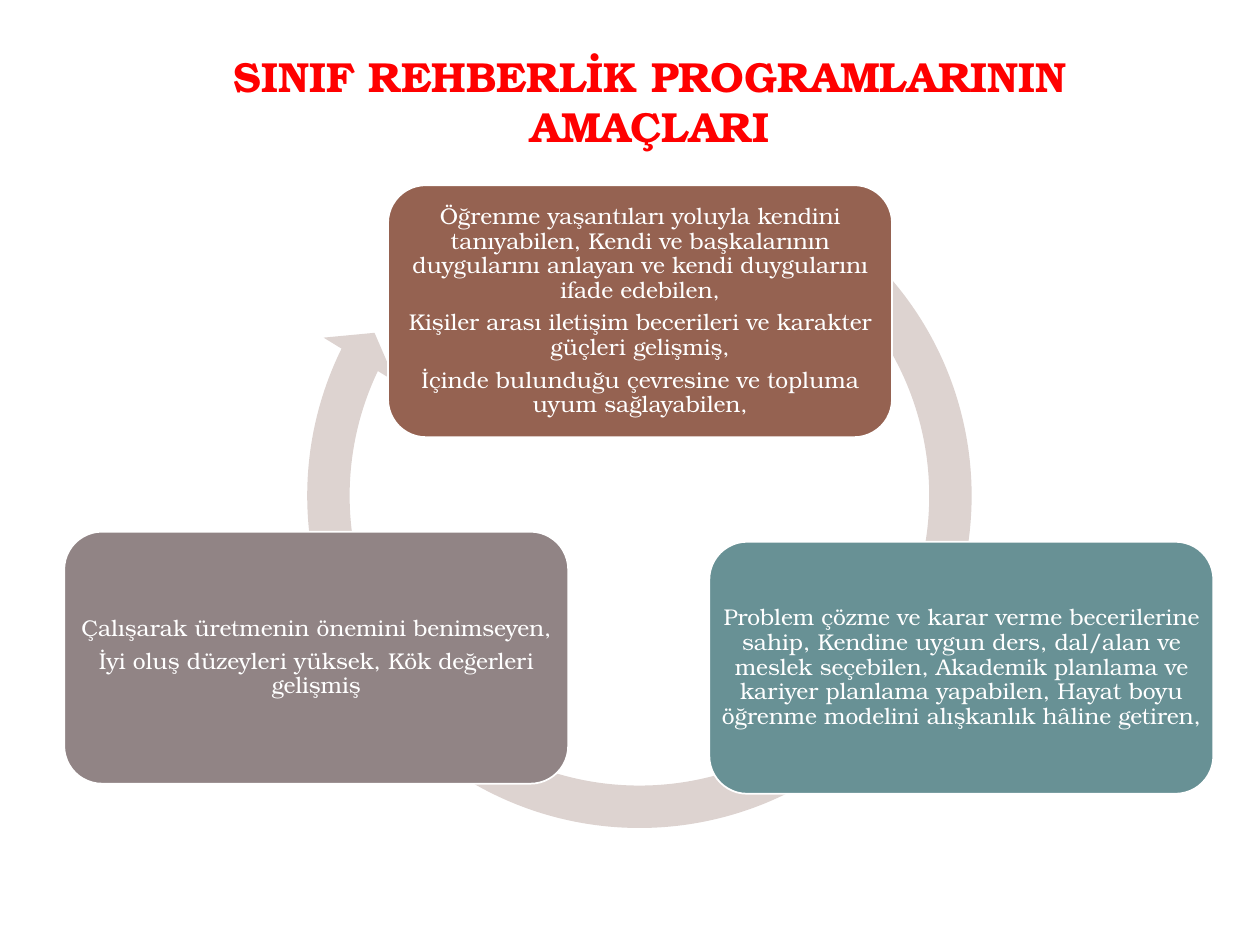
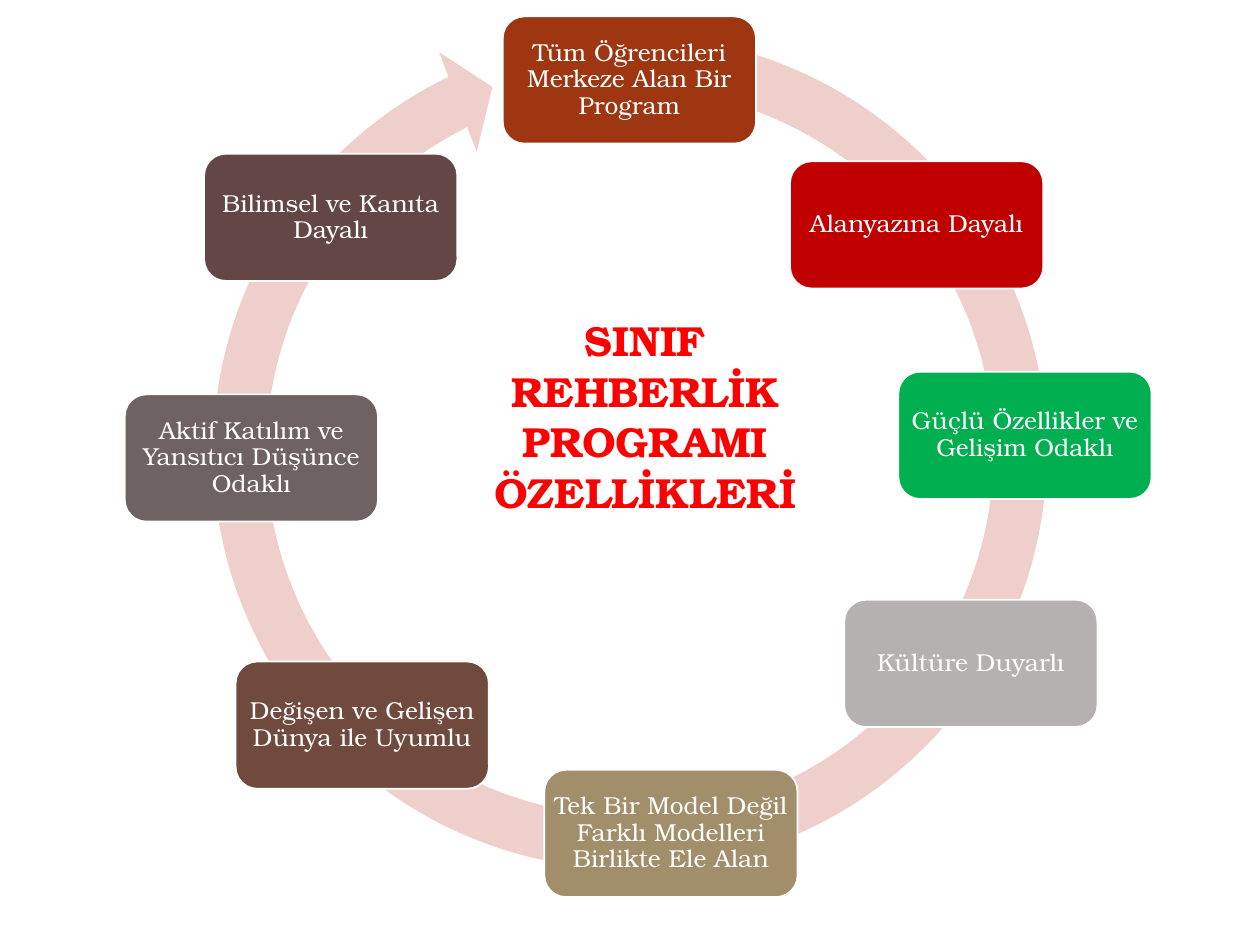
from dataclasses import dataclass

from pptx import Presentation
from pptx.dml.color import RGBColor
from pptx.enum.shapes import MSO_SHAPE
from pptx.enum.text import MSO_ANCHOR, MSO_AUTO_SIZE, PP_ALIGN
from pptx.util import Inches, Pt

ROUNDED = MSO_SHAPE.ROUNDED_RECTANGLE
CIRCULAR_ARROW = MSO_SHAPE.CIRCULAR_ARROW
CENTER = PP_ALIGN.CENTER
MIDDLE = MSO_ANCHOR.MIDDLE
TOP = MSO_ANCHOR.TOP
GROW = MSO_AUTO_SIZE.SHAPE_TO_FIT_TEXT
COLUMNS = 100
BLANK_LAYOUT = 6


@dataclass(frozen=True)
class Theme:
    font: str = "TeX Gyre Bonum"
    title_color: str = "FF0000"
    light: str = "FFFFFF"
    title_size: int = 24
    goal_size: int = 13
    feature_size: int = 14
    line_spacing: float = 0.9
    space_after: float = 0.35
    goal_ring: str = "DDD3D0"
    goal_colors: tuple = ("956251", "689195", "918485")
    feature_ring: str = "EFCFCC"
    feature_colors: tuple = ("9E3611", "C00000", "00B050", "B5B1B1",
                             "A28E6A", "704A3D", "6E6263", "644646")


class CycleDeck:
    def __init__(self, theme):
        self.theme = theme
        self.deck = Presentation()
        self.deck.slide_width = Inches(10)
        self.deck.slide_height = Inches(7.5)
        self.cell = self.deck.slide_width / COLUMNS
        self.slide = None

    def new_slide(self):
        layout = self.deck.slide_layouts[BLANK_LAYOUT]
        self.slide = self.deck.slides.add_slide(layout)

    def place(self, *cells):
        return [round(count * self.cell) for count in cells]

    def set_text(self, frame, paragraphs, size, color, bold=False):
        frame.word_wrap = True
        frame.text = "\n".join(paragraphs)
        for para in frame.paragraphs:
            para.alignment = CENTER
            for span in para.runs:
                span.font.name = self.theme.font
                span.font.size = Pt(size)
                span.font.bold = bold
                span.font.color.rgb = RGBColor.from_string(color)

    def title(self, text, left, top, width, height):
        box = self.slide.shapes.add_textbox(*self.place(left, top, width, height))
        frame = box.text_frame
        frame.vertical_anchor = TOP
        frame.auto_size = GROW
        self.set_text(frame, [text], self.theme.title_size, self.theme.title_color, bold=True)

    def shape(self, kind, color, *cells):
        shape = self.slide.shapes.add_shape(kind, *self.place(*cells))
        shape.shadow.inherit = False
        shape.fill.solid()
        shape.fill.fore_color.rgb = RGBColor.from_string(color)
        return shape

    def ring(self, color, left, top, diameter, adjustments):
        arrow = self.shape(CIRCULAR_ARROW, color, left, top, diameter, diameter)
        arrow.line.fill.background()
        for index, value in enumerate(adjustments):
            arrow.adjustments[index] = value

    def card(self, paragraphs, color, size, corner, *cells):
        theme = self.theme
        card = self.shape(ROUNDED, color, *cells)
        card.adjustments[0] = corner
        card.line.color.rgb = RGBColor.from_string(theme.light)
        card.line.width = Pt(1)
        frame = card.text_frame
        frame.vertical_anchor = MIDDLE
        frame.margin_left = frame.margin_right = 0
        frame.margin_top = frame.margin_bottom = 0
        self.set_text(frame, paragraphs, size, theme.light)
        for para in frame.paragraphs:
            para.line_spacing = theme.line_spacing
            para.space_after = Pt(size * theme.space_after)

    def cards(self, items, colors, size, corner, width, height):
        for (left, top, *paragraphs), color in zip(items, colors):
            self.card(paragraphs, color, size, corner, left, top, width, height)


GOALS = [
    (30.8, 14.7,
     "Öğrenme yaşantıları yoluyla kendini tanıyabilen, Kendi ve başkalarının "
     "duygularını anlayan ve kendi duygularını ifade edebilen,",
     "Kişiler arası iletişim becerileri ve karakter güçleri gelişmiş,",
     "İçinde bulunduğu çevresine ve topluma uyum sağlayabilen,"),
    (56.3, 43,
     "Problem çözme ve karar verme becerilerine sahip, Kendine uygun ders, "
     "dal/alan ve meslek seçebilen, Akademik planlama ve kariyer planlama "
     "yapabilen, Hayat boyu öğrenme modelini alışkanlık hâline getiren,"),
    (5.1, 42.2,
     "Çalışarak üretmenin önemini benimseyen,",
     "İyi oluş düzeyleri yüksek, Kök değerleri gelişmiş"),
]

FEATURES = [
    (39.9, 1.3, "Tüm Öğrencileri Merkeze Alan Bir Program"),
    (62.7, 12.8, "Alanyazına Dayalı"),
    (71.3, 29.5, "Güçlü Özellikler ve Gelişim Odaklı"),
    (67, 47.6, "Kültüre Duyarlı"),
    (43.2, 61.1, "Tek Bir Model Değil Farklı Modelleri Birlikte Ele Alan"),
    (18.7, 52.5, "Değişen ve Gelişen Dünya ile Uyumlu"),
    (9.9, 31.3, "Aktif Katılım ve Yansıtıcı Düşünce Odaklı"),
    (16.2, 12.2, "Bilimsel ve Kanıta Dayalı"),
]


def goals_slide(page):
    theme = page.theme
    page.new_slide()
    page.ring(theme.goal_ring, 22.7, 11.3, 56.1, (0.06, 3.41, 123.55, 183.18, 0.06))
    page.cards(GOALS, theme.goal_colors, theme.goal_size, 0.15, 40, 20)
    page.title("SINIF REHBERLİK PROGRAMLARININ AMAÇLARI", 14.2, 3.5, 74.8, 9)


def features_slide(page):
    theme = page.theme
    page.new_slide()
    page.ring(theme.feature_ring, 14.8, 0.7, 70.4, (0.06, 3.31, 146.31, 168.85, 0.06))
    page.cards(FEATURES, theme.feature_colors, theme.feature_size, 0.17, 20.1, 10.1)
    page.title("SINIF REHBERLİK PROGRAMI ÖZELLİKLERİ", 38.2, 24.5, 26, 17)


def main():
    page = CycleDeck(Theme())
    goals_slide(page)
    features_slide(page)
    page.deck.save("out.pptx")


if __name__ == "__main__":
    main()
